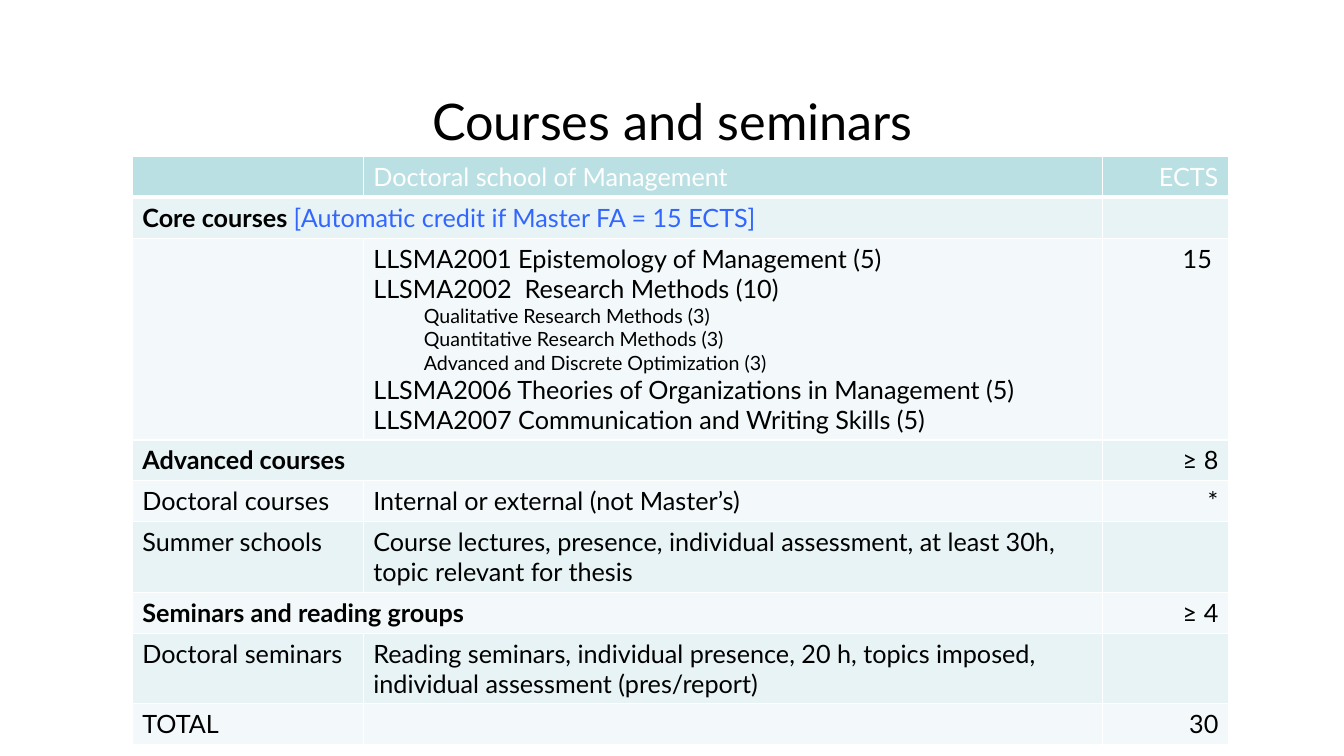
from dataclasses import dataclass

from lxml.etree import SubElement
from pptx import Presentation
from pptx.dml.color import RGBColor as RGB
from pptx.enum.text import MSO_ANCHOR as ANCHOR, MSO_AUTO_SIZE as AUTO, PP_ALIGN as ALIGN
from pptx.oxml.ns import qn
from pptx.util import Emu, Pt


@dataclass(frozen=True)
class Theme:
    font: str = "Lato"
    title_size: int = 36
    body_size: int = 18
    detail_size: int = 14
    ink: str = "000000"
    white: str = "FFFFFF"
    note: str = "3366FF"
    header: str = "BBE0E3"
    bands: tuple = ("F3F9FA", "E7F3F4")  # even rows, odd rows


THEME = Theme()
COL_WIDTHS = (220, 704, 120)
LINE_ROW, TWO_LINE_ROW, CORE_ROW = 39, 67, 191
DETAIL_INDENT = 48

CORE_LIST = [
    "LLSMA2001 Epistemology of Management (5)",
    "LLSMA2002  Research Methods (10)",
    ("Qualitative Research Methods (3)",
     "Quantitative Research Methods (3)",
     "Advanced and Discrete Optimization (3)"),
    "LLSMA2006 Theories of Organizations in Management (5)",
    "LLSMA2007 Communication and Writing Skills (5)",
]
# Height, first column, description (None: section heading across both), credits
ROWS = [
    (LINE_ROW, "", ["Doctoral school of Management"], "ECTS"),
    (LINE_ROW, "Core courses ", None, ""),
    (CORE_ROW, "", CORE_LIST, "15 "),
    (LINE_ROW, "Advanced courses", None, "≥ 8"),
    (LINE_ROW, "Doctoral courses", ["Internal or external (not Master’s)"], "*"),
    (TWO_LINE_ROW, "Summer schools",
     ["Course lectures, presence, individual assessment, at least 30h, "
      "topic relevant for thesis"], ""),
    (LINE_ROW, "Seminars and reading groups", None, "≥ 4"),
    (TWO_LINE_ROW, "Doctoral seminars",
     ["Reading seminars, individual presence, 20 h, topics imposed, "
      "individual assessment (pres/report)"], ""),
    (LINE_ROW, "TOTAL", [], "30"),
]
CORE_NOTE = "[Automatic credit if Master FA = 15 ECTS]"


def px(n):
    return Emu(n * 9525)


def add_run(p, text, size=THEME.body_size, color=THEME.ink, bold=False):
    r = p.add_run()
    r.text = text
    r.font.name, r.font.size, r.font.bold = THEME.font, Pt(size), bold
    r.font.color.rgb = RGB.from_string(color)


def style_cell(cell, fill, edges):
    """Draw white edges of the given point widths, then fill the cell."""
    tcPr = cell._tc.get_or_add_tcPr()
    for side, width in edges.items():
        ln = SubElement(tcPr, qn(f"a:ln{side}"), w=str(Pt(width)))
        line_fill = SubElement(ln, qn("a:solidFill"))
        SubElement(line_fill, qn("a:srgbClr"), val=THEME.white)
    cell.fill.solid()
    cell.fill.fore_color.rgb = RGB.from_string(fill)


def write_lines(cell, lines, color):
    """Write one paragraph a line; a tuple holds indented detail lines."""
    tf = cell.text_frame
    flat = []
    for line in lines:
        if isinstance(line, tuple):
            flat += [(text, True) for text in line]
        else:
            flat.append((line, False))
    for i, (text, detail) in enumerate(flat):
        p = tf.add_paragraph() if i else tf.paragraphs[0]
        if detail:
            p.level = 1
            p._p.get_or_add_pPr().set("marL", str(px(DETAIL_INDENT)))
        add_run(p, text, THEME.detail_size if detail else THEME.body_size, color)


def place_title(slide, x, y, w, h):
    s = slide.shapes.title
    s.left, s.top, s.width, s.height = px(x), px(y), px(w), px(h)
    tf = s.text_frame
    tf.auto_size, tf.vertical_anchor = AUTO.NONE, ANCHOR.TOP
    p = tf.paragraphs[0]
    p.alignment = ALIGN.CENTER
    add_run(p, "Courses and seminars", THEME.title_size)


def add_course_table(slide, x, y):
    height = sum(row[0] for row in ROWS)
    frame = slide.shapes.add_table(len(ROWS), len(COL_WIDTHS), px(x), px(y),
                                   px(sum(COL_WIDTHS)), px(height))
    table = frame.table
    for column, width in zip(table.columns, COL_WIDTHS):
        column.width = px(width)

    for i, (row_height, label, lines, credits) in enumerate(ROWS):
        table.rows[i].height = px(row_height)
        cells = table.rows[i].cells
        header = i == 0
        color = THEME.white if header else THEME.ink
        fill = THEME.header if header else THEME.bands[i % 2]
        edges = {"L": 1, "R": 1, "T": 1, "B": 3} if header else {"L": 1, "R": 1, "B": 1}
        for cell in cells:
            style_cell(cell, fill, edges)

        # Section headings span the first two columns
        if lines is None:
            cells[0].merge(cells[1])
        if label:
            add_run(cells[0].text_frame.paragraphs[0], label, color=color, bold=lines is None)
        write_lines(cells[1], lines or [], color)

        # Credits
        if credits:
            p = cells[2].text_frame.paragraphs[0]
            p.alignment = ALIGN.RIGHT
            add_run(p, credits, color=color)

    add_run(table.cell(1, 0).text_frame.paragraphs[0], CORE_NOTE, color=THEME.note)


def main():
    prs = Presentation()
    prs.slide_width, prs.slide_height = px(1280), px(720)
    slide = prs.slides.add_slide(prs.slide_layouts[5])
    place_title(slide, 141, 81, 999, 84)
    add_course_table(slide, 126, 149)
    prs.save("out.pptx")


if __name__ == "__main__":
    main()
